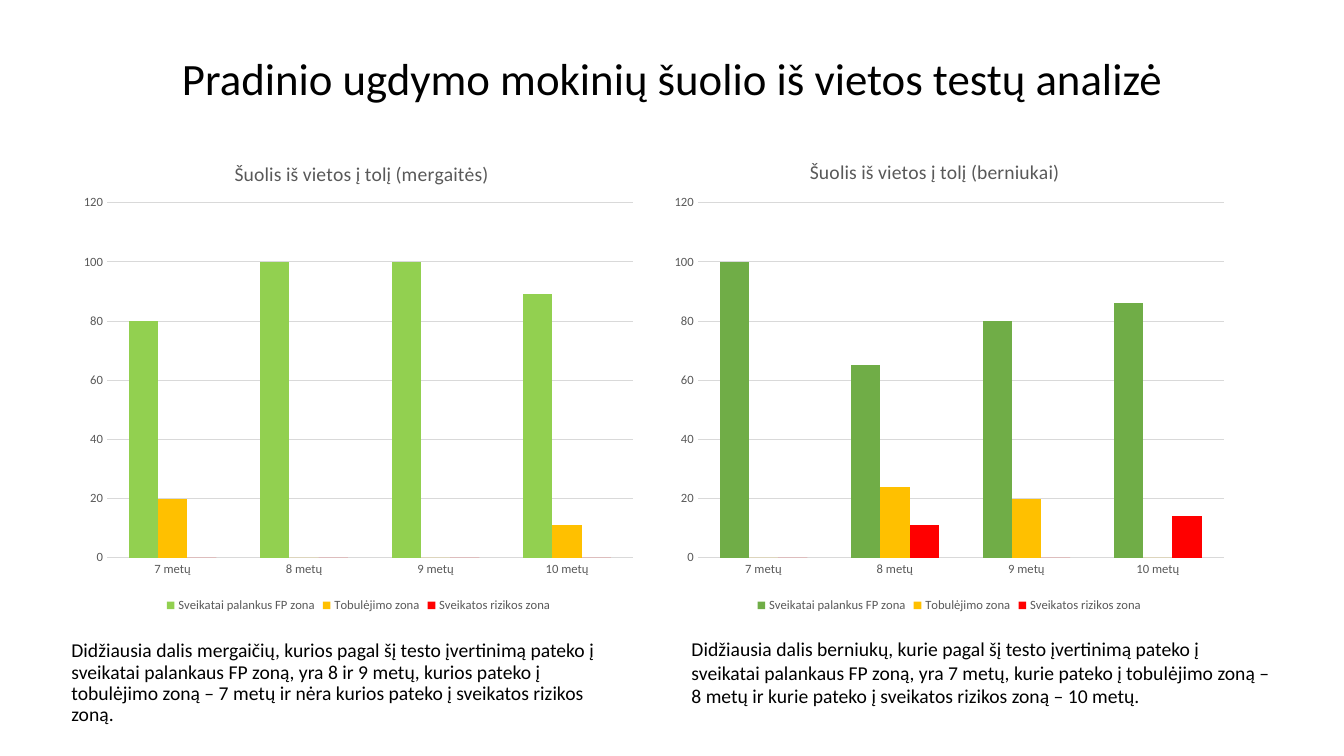
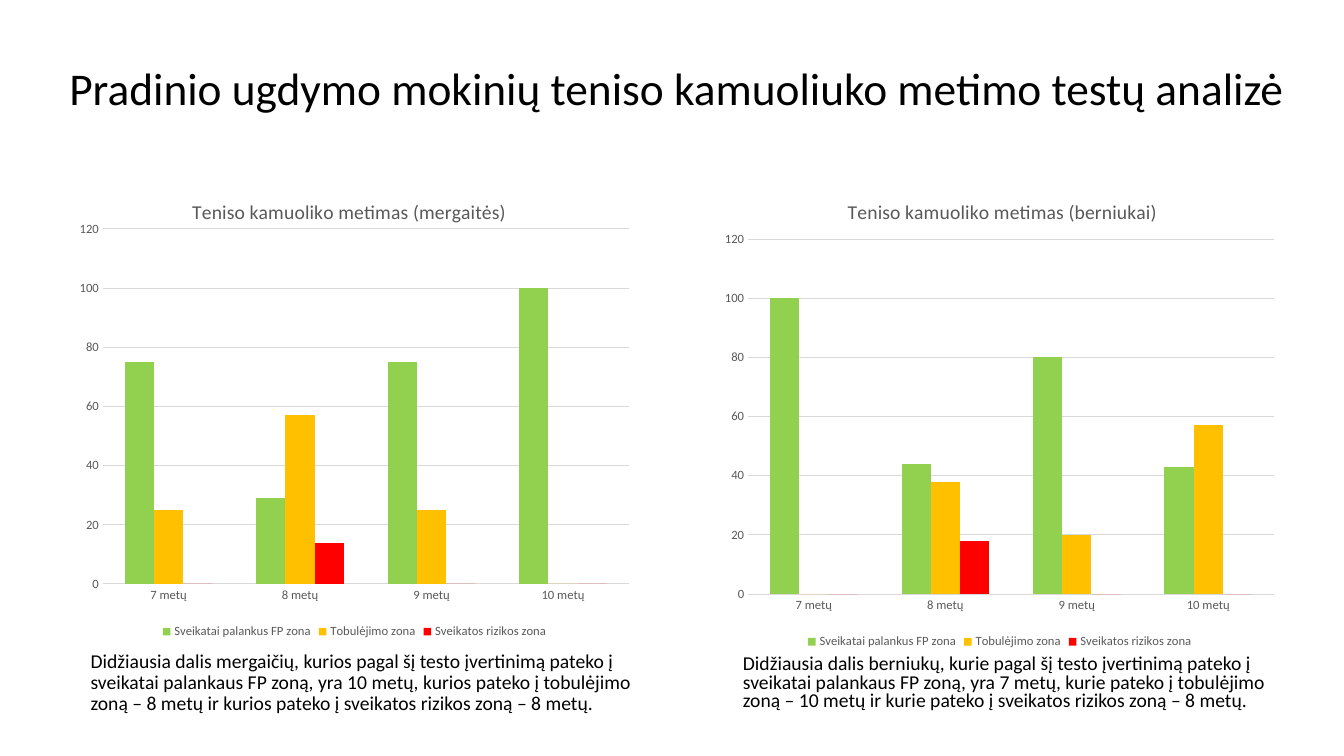
from lxml import etree
from pptx import Presentation
from pptx.chart.data import CategoryChartData
from pptx.dml.color import RGBColor
from pptx.enum.chart import XL_CHART_TYPE, XL_LEGEND_POSITION, XL_TICK_MARK
from pptx.enum.text import MSO_ANCHOR, PP_ALIGN
from pptx.oxml.ns import qn
from pptx.util import Inches, Pt

COLUMNS = XL_CHART_TYPE.COLUMN_CLUSTERED
BOTTOM = XL_LEGEND_POSITION.BOTTOM
NO_TICK = XL_TICK_MARK.NONE
TOP, MIDDLE = MSO_ANCHOR.TOP, MSO_ANCHOR.MIDDLE
LEFT, CENTER = PP_ALIGN.LEFT, PP_ALIGN.CENTER

FONT = "Calibri"
BLACK, GREY, GRID = "000000", "595959", "D9D9D9"
LIME, GREEN, AMBER, RED = "92D050", "70AD47", "FFC000", "FF0000"

AGES = ["7 metų", "8 metų", "9 metų", "10 metų"]
ZONES = ["Sveikatai palankus FP zona", "Tobulėjimo zona", "Sveikatos rizikos zona"]
CHART_SIZE = (5.67, 4.76)
PLOT_SHARES = {"x": 0.06, "y": 0.137, "w": 0.92, "h": 0.74}

# Boxes are left, top, width, height in inches; title_at is a share of the chart
SLIDES = [
    {
        "title": "Pradinio ugdymo mokinių šuolio iš vietos testų analizė",
        "title_box": (0.92, 0.4, 11.5, 0.81),
        "title_size": 32,
        "groups": [
            {
                "chart_title": "Šuolis iš vietos į tolį (mergaitės)",
                "title_at": (0.277, 0.04),
                "chart_at": (0.72, 1.36),
                "healthy": LIME,
                "values": [(80, 100, 100, 89), (20, 0, 0, 11), (0, 0, 0, 0)],
                "summary": "Didžiausia dalis mergaičių, kurios pagal šį testo įvertinimą "
                           "pateko į sveikatai palankaus FP zoną, yra 8 ir 9 metų, kurios "
                           "pateko į tobulėjimo zoną – 7 metų ir nėra kurios pateko į "
                           "sveikatos rizikos zoną.",
                "summary_box": (0.61, 6.31, 5.58, 1.03),
                "spacing": 0.9,
            },
            {
                "chart_title": "Šuolis iš vietos į tolį (berniukai)",
                "title_at": (0.25, 0.037),
                "chart_at": (6.58, 1.36),
                "healthy": GREEN,
                "values": [(100, 65, 80, 86), (0, 24, 20, 0), (0, 11, 0, 14)],
                "summary": "Didžiausia dalis berniukų, kurie pagal šį testo įvertinimą "
                           "pateko į sveikatai palankaus FP zoną, yra 7 metų, kurie pateko "
                           "į tobulėjimo zoną – 8 metų ir kurie pateko į sveikatos rizikos "
                           "zoną – 10 metų.",
                "summary_box": (6.76, 6.27, 5.96, 0.81),
                "spacing": 1.0,
            },
        ],
    },
    {
        "title": "Pradinio ugdymo mokinių teniso kamuoliuko metimo testų analizė",
        "title_box": (0.22, 0.4, 12.98, 1),
        "title_size": 32.4,
        "groups": [
            {
                "chart_title": "Teniso kamuoliko metimas (mergaitės)",
                "title_at": (0.21, 0.065),
                "chart_at": (0.68, 1.62),
                "healthy": LIME,
                "values": [(75, 29, 75, 100), (25, 57, 25, 0), (0, 14, 0, 0)],
                "summary": "Didžiausia dalis mergaičių, kurios pagal šį testo įvertinimą "
                           "pateko į sveikatai palankaus FP zoną, yra 10 metų, kurios "
                           "pateko į tobulėjimo zoną – 8 metų ir kurios pateko į sveikatos "
                           "rizikos zoną – 8 metų.",
                "summary_box": (0.8, 6.41, 5.67, 0.79),
                "spacing": 0.9,
            },
            {
                "chart_title": "Teniso kamuoliko metimas (berniukai)",
                "title_at": (0.228, 0.045),
                "chart_at": (7.08, 1.72),
                "healthy": LIME,
                "values": [(100, 44, 80, 43), (0, 38, 20, 57), (0, 18, 0, 0)],
                "summary": "Didžiausia dalis berniukų, kurie pagal šį testo įvertinimą "
                           "pateko į sveikatai palankaus FP zoną, yra 7 metų, kurie pateko "
                           "į tobulėjimo zoną – 10 metų ir kurie pateko į sveikatos rizikos "
                           "zoną – 8 metų.",
                "summary_box": (7.27, 6.45, 5.67, 0.71),
                "spacing": 0.8,
            },
        ],
    },
]


def rgb(color):
    return RGBColor.from_string(color)


def style_font(font, size, color):
    font.name = FONT
    font.size = Pt(size)
    font.bold = False
    font.color.rgb = rgb(color)


def add_text(slide, box, text, size, spacing, align=LEFT, anchor=TOP):
    frame = slide.shapes.add_textbox(*map(Inches, box)).text_frame
    frame.word_wrap = True
    frame.vertical_anchor = anchor
    paragraph = frame.paragraphs[0]
    paragraph.alignment = align
    paragraph.line_spacing = spacing
    run = paragraph.add_run()
    run.text = text
    style_font(run.font, size, BLACK)


def place(element, shares, inner=False):
    """Give a chart title or plot area a fixed place, as shares of the chart."""
    layout = element.find(qn("c:layout"))
    if layout is None:
        layout = etree.Element(qn("c:layout"))
        text = element.find(qn("c:tx"))
        element.insert(0 if text is None else element.index(text) + 1, layout)
    for child in list(layout):
        layout.remove(child)
    manual = etree.SubElement(layout, qn("c:manualLayout"))
    settings = [("layoutTarget", "inner")] if inner else []
    settings += [("xMode", "edge"), ("yMode", "edge"), *shares.items()]
    for tag, value in settings:
        etree.SubElement(manual, qn(f"c:{tag}")).set("val", str(value))


def add_zone_chart(slide, group):
    data = CategoryChartData()
    data.categories = AGES
    for zone, values in zip(ZONES, group["values"]):
        data.add_series(zone, values)
    box = map(Inches, (*group["chart_at"], *CHART_SIZE))
    chart = slide.shapes.add_chart(COLUMNS, *box, data).chart
    style_font(chart.font, 10, BLACK)

    chart.has_title = True
    title = chart.chart_title
    run = title.text_frame.paragraphs[0].add_run()
    run.text = group["chart_title"]
    style_font(run.font, 14, GREY)
    title.include_in_layout = False
    place(title._element, dict(zip("xy", group["title_at"])))

    chart.has_legend = True
    chart.legend.position = BOTTOM
    chart.legend.include_in_layout = False
    style_font(chart.legend.font, 9, GREY)

    for axis in (chart.category_axis, chart.value_axis):
        axis.major_tick_mark = axis.minor_tick_mark = NO_TICK
        axis.format.line.fill.background()
        style_font(axis.tick_labels.font, 9, GREY)
    scale = chart.value_axis
    scale.minimum_scale, scale.maximum_scale, scale.major_unit = 0, 120, 20
    scale.has_major_gridlines = True
    scale.major_gridlines.format.line.color.rgb = rgb(GRID)
    scale.major_gridlines.format.line.width = Pt(0.75)

    plot = chart.plots[0]
    plot.gap_width, plot.overlap = 150, 0
    plot.vary_by_categories = False
    for series, color in zip(plot.series, (group["healthy"], AMBER, RED)):
        series.format.fill.solid()
        series.format.fill.fore_color.rgb = rgb(color)
    place(chart._chartSpace.chart.plotArea, PLOT_SHARES, inner=True)


def main():
    deck = Presentation()
    deck.slide_width, deck.slide_height = Inches(13.33), Inches(7.5)
    for content in SLIDES:
        slide = deck.slides.add_slide(deck.slide_layouts[6])
        add_text(slide, content["title_box"], content["title"],
                 content["title_size"], 0.9, CENTER, MIDDLE)
        for group in content["groups"]:
            add_zone_chart(slide, group)
            add_text(slide, group["summary_box"], group["summary"], 14, group["spacing"])
    deck.save("out.pptx")


if __name__ == "__main__":
    main()
